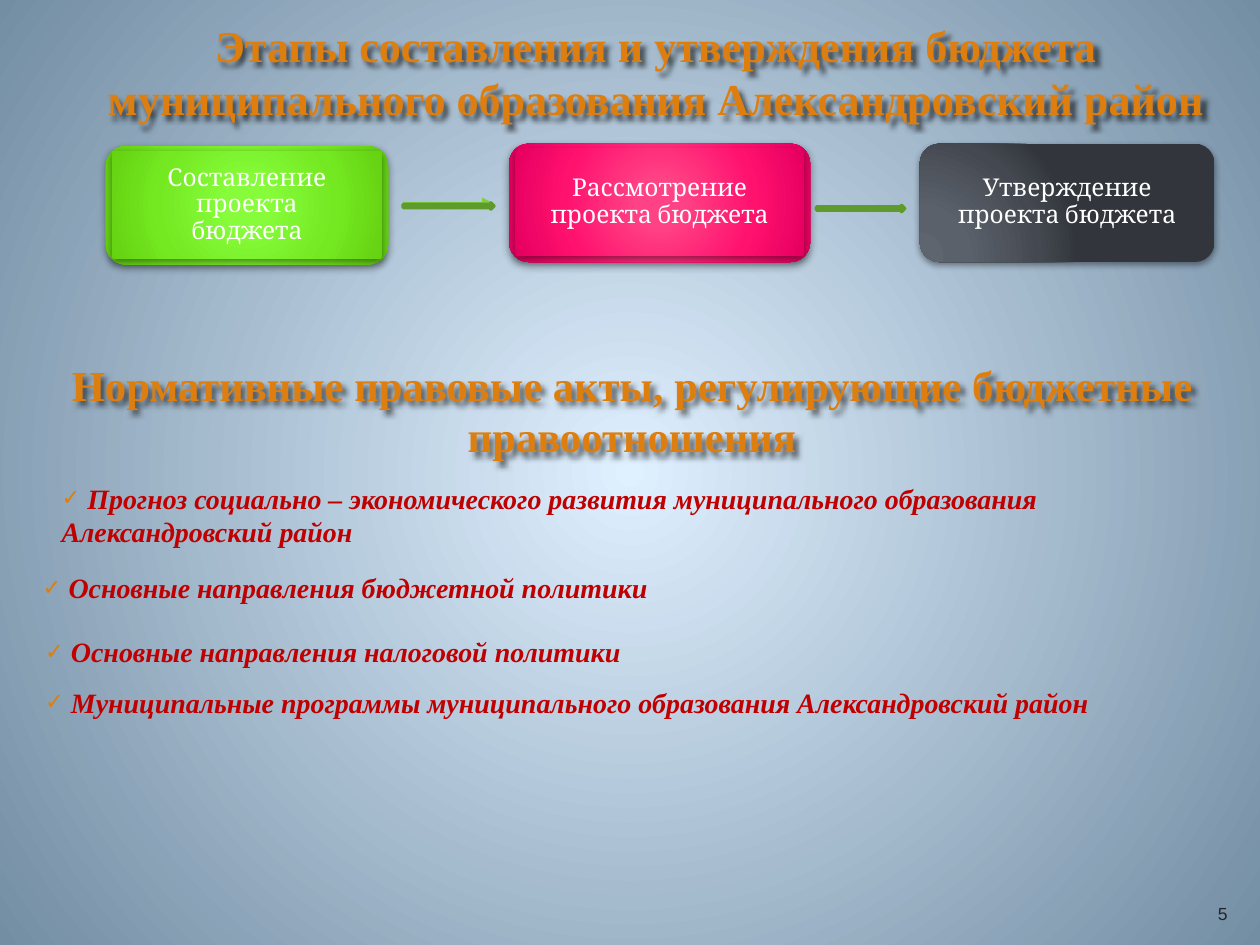
from dataclasses import dataclass
from typing import Optional

from lxml.etree import SubElement
from pptx import Presentation
from pptx.dml.color import RGBColor
from pptx.enum.shapes import MSO_CONNECTOR as Connector, MSO_SHAPE as Preset
from pptx.enum.text import MSO_ANCHOR as Anchor, PP_ALIGN as Align
from pptx.oxml.ns import qn
from pptx.util import Inches, Pt

SERIF = "Times New Roman"
ORANGE, RED, GREEN, DARK_GREEN = "DD7E0E", "C00000", "7FD13B", "5E9B2C"
CENTER = (50, 50, 50, 50)


@dataclass
class Gradient:
    stops: list
    focus: tuple = CENTER


@dataclass
class Shadow:
    alpha: int
    blur: float
    distance: float
    angle: int = 90


@dataclass
class Stage:
    left: float
    top: float
    width: float
    text: str
    gradient: Gradient
    shadow: Shadow
    inner_panel: bool = True


@dataclass
class Heading:
    box: tuple
    text: str
    size: float


@dataclass
class Act:
    left: float
    top: float
    text: str
    align: Align


def color(code: str) -> RGBColor:
    return RGBColor.from_string(code)


def child(parent, tag: str, **attributes):
    return SubElement(parent, qn(tag), {k: str(v) for k, v in attributes.items()})


def paint_gradient(fill, holder, gradient: Gradient) -> None:
    fill.solid()
    solid = holder.find(qn("a:solidFill"))
    grad = child(holder, "a:gradFill", rotWithShape=1)
    stops = child(grad, "a:gsLst")
    for position, code in gradient.stops:
        stop = child(stops, "a:gs", pos=position * 1000)
        child(stop, "a:srgbClr", val=code)
    path = child(grad, "a:path", path="circle")
    edges = {side: share * 1000 for side, share in zip("ltrb", gradient.focus)}
    child(path, "a:fillToRect", **edges)
    holder.replace(solid, grad)


def cast_shadow(shape, shadow: Shadow) -> None:
    shape.shadow.inherit = False
    effects = shape._element.spPr.find(qn("a:effectLst"))
    outer = child(effects, "a:outerShdw", blurRad=Pt(shadow.blur),
                  dist=Pt(shadow.distance), dir=shadow.angle * 60000, rotWithShape=0)
    tint = child(outer, "a:srgbClr", val="000000")
    child(tint, "a:alpha", val=shadow.alpha * 1000)


def add_run(paragraph, text: str, size: float, font: str, code: str,
            bold: bool = False, italic: bool = False) -> None:
    run = paragraph.add_run()
    run.text = text
    run.font.size, run.font.name = Pt(size), font
    run.font.color.rgb = color(code)
    run.font.bold, run.font.italic = bold, italic


def add_box(slide, box: tuple, anchor: Anchor, align: Align):
    holder = slide.shapes.add_textbox(*map(Inches, box))
    frame = holder.text_frame
    frame.word_wrap = True
    frame.vertical_anchor = anchor
    frame.paragraphs[0].alignment = align
    return holder


def add_heading(slide, heading: Heading) -> None:
    holder = add_box(slide, heading.box, Anchor.MIDDLE, Align.CENTER)
    cast_shadow(holder, HEADING_SHADOW)
    add_run(holder.text_frame.paragraphs[0], heading.text, heading.size, SERIF, ORANGE, bold=True)


def add_panel(slide, preset: Preset, box: tuple, gradient: Optional[Gradient],
              shadow: Optional[Shadow]):
    panel = slide.shapes.add_shape(preset, *map(Inches, box))
    panel.shadow.inherit = False
    panel.line.fill.background()
    if gradient:
        paint_gradient(panel.fill, panel._element.spPr, gradient)
    else:
        panel.fill.background()
    if shadow:
        cast_shadow(panel, shadow)
    return panel


def add_stage(slide, stage: Stage) -> None:
    outer = (stage.left, stage.top, stage.width, 0.94)
    inner = (stage.left + 0.05, stage.top + 0.04, stage.width - 0.1, 0.85)
    add_panel(slide, Preset.ROUNDED_RECTANGLE, outer, stage.gradient, stage.shadow)
    label = add_panel(slide, Preset.RECTANGLE, inner,
                      stage.gradient if stage.inner_panel else None,
                      stage.shadow if stage.inner_panel else None)
    frame = label.text_frame
    frame.word_wrap = True
    frame.vertical_anchor = Anchor.MIDDLE
    frame.margin_left = frame.margin_right = Inches(0.25)
    frame.margin_top = frame.margin_bottom = 0
    paragraph = frame.paragraphs[0]
    paragraph.alignment = Align.CENTER
    paragraph.line_spacing = 0.9
    add_run(paragraph, stage.text, 14, "Cambria", "FFFFFF")


def add_act(slide, act: Act) -> None:
    holder = add_box(slide, (act.left, act.top, 9.25, 0.51), Anchor.TOP, act.align)
    paragraph = holder.text_frame.paragraphs[0]
    props = paragraph._p.get_or_add_pPr()
    props.set("marL", "0")
    props.set("indent", str(Inches(-0.2)))
    child(child(props, "a:spcBef"), "a:spcPct", val=20000)
    child(child(props, "a:buClr"), "a:srgbClr", val=ORANGE)
    child(props, "a:buSzPct", val=80000)
    child(props, "a:buFont", typeface="Arial")
    child(props, "a:buChar", char="✓")
    child(child(props, "a:tabLst"), "a:tab", pos=Inches(0.2), algn="l")
    add_run(paragraph, " ", 16, SERIF, "000000", italic=True)
    add_run(paragraph, act.text, 16, SERIF, RED, bold=True, italic=True)


def add_block_arrow(slide, left: float, top: float, width: float) -> None:
    arrow = slide.shapes.add_shape(Preset.RIGHT_ARROW, *map(Inches, (left, top, width, 0.05)))
    arrow.shadow.inherit = False
    arrow.fill.solid()
    arrow.fill.fore_color.rgb = color(GREEN)
    arrow.line.color.rgb = color(DARK_GREEN)
    arrow.line.width = Pt(2)


def add_thin_arrow(slide, start: float, end: float, y: float) -> None:
    arrow = slide.shapes.add_connector(Connector.STRAIGHT, *map(Inches, (start, y, end, y)))
    arrow.line.color.rgb = color(GREEN)
    arrow.line.width = Pt(0.75)
    child(arrow.line._get_or_add_ln(), "a:tailEnd", type="triangle")
    child(arrow._element.spPr, "a:effectLst")


LIME = Gradient([(0, "86FD3A"), (15, "86FC3A"), (62, "74E921"), (97, "66D313"), (100, "63D405")])
PINK = Gradient([(0, "FF4386"), (15, "FF4285"), (62, "FF116E"), (97, "E80061"), (100, "CF0062")])
GRAPHITE = Gradient([(0, "5E656F"), (30, "5B616B"), (75, "444951"), (100, "32363C")],
                    (5, 100, 120, 10))
SKY = Gradient([(0, "DFF0FF"), (100, "738DA3")])
DEEP, SOFT = Shadow(43, 5, 2), Shadow(42, 4, 1.6)
HEADING_SHADOW = Shadow(60, 3, 3, 45)

HEADINGS = [
    Heading((0.63, 0.2, 9.15, 0.74), "Этапы составления и утверждения бюджета "
            "муниципального образования Александровский район", 25.2),
    Heading((0.26, 2.77, 9.51, 0.97),
            "Нормативные правовые акты, регулирующие бюджетные правоотношения", 24.4),
]
STAGES = [
    Stage(0.84, 1.16, 2.24, "Составление проекта бюджета", LIME, DEEP),
    Stage(4.04, 1.14, 2.39, "Рассмотрение проекта бюджета", PINK, DEEP),
    Stage(7.3, 1.14, 2.34, "Утверждение проекта бюджета", GRAPHITE, SOFT, False),
]
ACTS = [
    Act(0.39, 3.77, "Прогноз социально – экономического развития муниципального "
        "образования Александровский район", Align.LEFT),
    Act(0.24, 4.48, "Основные направления бюджетной политики", Align.JUSTIFY),
    Act(0.26, 4.99, "Основные направления налоговой политики", Align.JUSTIFY),
    Act(0.26, 5.39, "Муниципальные программы муниципального образования "
        "Александровский район", Align.LEFT),
]


def main() -> None:
    deck = Presentation()
    deck.slide_width, deck.slide_height = Inches(10), Inches(7.5)
    slide = deck.slides.add_slide(deck.slide_layouts[6])
    backdrop = slide.background.fill
    paint_gradient(backdrop, slide._element.cSld.bg.bgPr, SKY)
    for heading in HEADINGS:
        add_heading(slide, heading)
    for stage in STAGES:
        add_stage(slide, stage)
    for act in ACTS:
        add_act(slide, act)
    add_thin_arrow(slide, 3.2, 3.91, 1.61)
    add_block_arrow(slide, 3.2, 1.61, 0.72)
    add_block_arrow(slide, 6.48, 1.63, 0.7)
    page_number = add_box(slide, (9.45, 7.05, 0.51, 0.4), Anchor.MIDDLE, Align.CENTER)
    add_run(page_number.text_frame.paragraphs[0], "5", 10, "Arial", "262626")
    deck.save("out.pptx")


if __name__ == "__main__":
    main()
